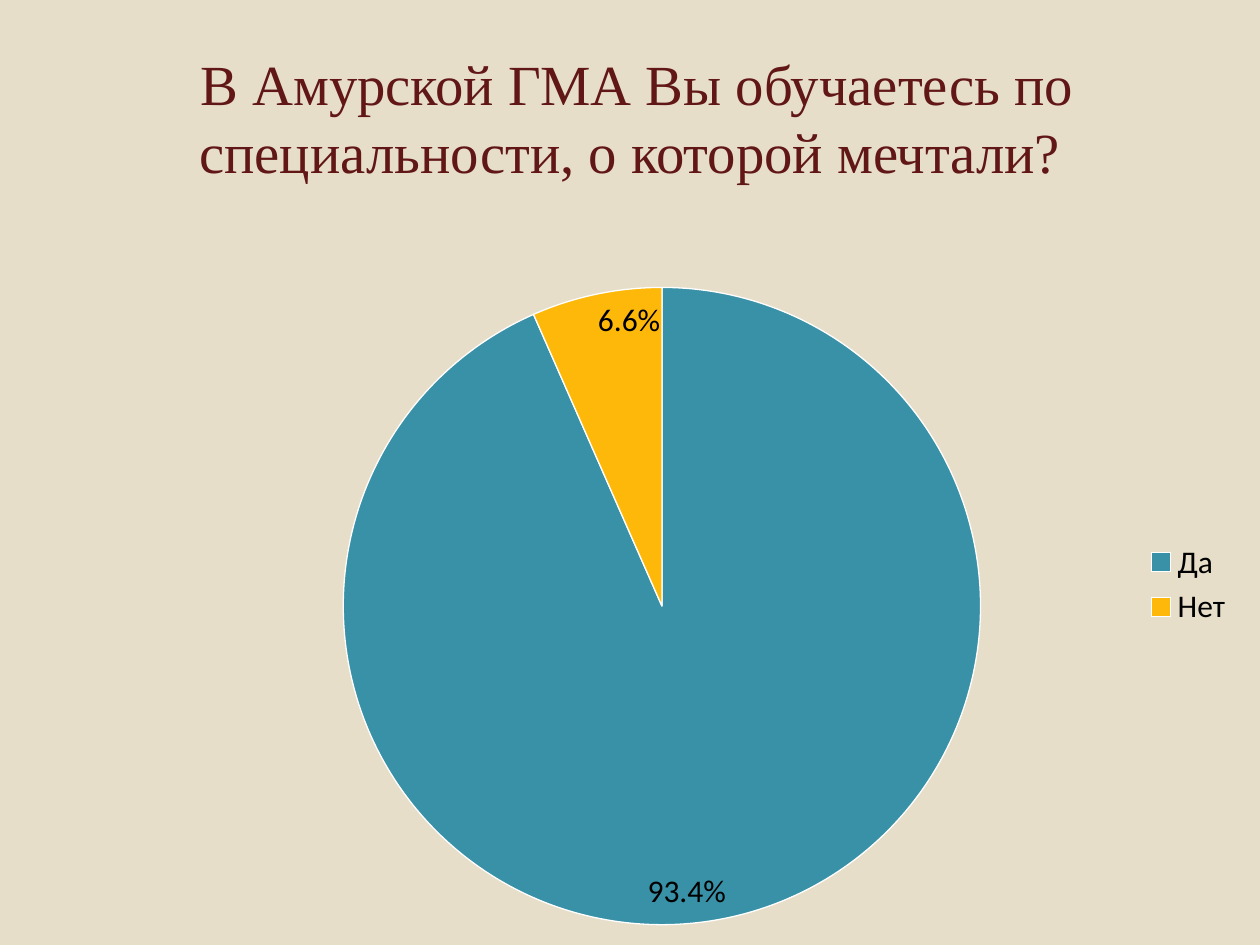
"""Builds a survey slide with a pie chart of two answers."""
from lxml import etree
from pptx import Presentation
from pptx import util as u
from pptx.chart import data
from pptx.dml.color import RGBColor
from pptx.enum import chart as ch, text

COLORS = {"back": "E7DEC9", "title": "621717", "text": "000000",
          "yes": "3891A7", "no": "FEB80A", "edge": "FFFFFF"}
ANSWERS = [("Да", 93.4, "yes"), ("Нет", 6.6, "no")]


def rgb(name):
    return RGBColor.from_string(COLORS[name])


def set_font(font, size, color, face):
    font.size, font.name, font.bold = u.Pt(size), face, False
    font.color.rgb = rgb(color)


def write(tf, content, size=18, color="text", face="Calibri", align=text.PP_ALIGN.LEFT):
    p = tf.paragraphs[0]
    p.alignment = align
    r = p.add_run()
    r.text = content
    set_font(r.font, size, color, face)


class Deck:
    """Holds the presentation, its style and the current slide."""

    def __init__(self, width=10, height=7.5):
        self.prs = Presentation()
        self.prs.slide_width, self.prs.slide_height = u.Inches(width), u.Inches(height)
        self.s = self.prs.slides.add_slide(self.prs.slide_layouts[5])
        fill = self.s.background.fill
        fill.solid()
        fill.fore_color.rgb = rgb("back")

    def box(self, x, y, w, h):
        wide, high = self.prs.slide_width, self.prs.slide_height
        return int(x * wide), int(y * high), int(w * wide), int(h * high)

    def title(self, content, *area):
        sp = self.s.shapes.title
        sp.left, sp.top, sp.width, sp.height = self.box(*area)
        tf = sp.text_frame
        tf.word_wrap = True
        tf.vertical_anchor = text.MSO_ANCHOR.MIDDLE
        write(tf, content, size=32.4, color="title", face="Times New Roman",
              align=text.PP_ALIGN.CENTER)

    def pie(self, answers, plot, *area):
        cd = data.CategoryChartData()
        cd.categories = [name for name, _, _ in answers]
        cd.add_series("Series 1", [value for _, value, _ in answers])
        chart = self.s.shapes.add_chart(ch.XL_CHART_TYPE.PIE, *self.box(*area), cd).chart
        chart.has_title = False
        set_font(chart.font, 18, "text", "Calibri")
        chart.has_legend = True
        chart.legend.position = ch.XL_LEGEND_POSITION.RIGHT
        chart.legend.include_in_layout = False
        set_font(chart.legend.font, 18, "text", "Calibri")
        pie = chart.plots[0]
        pie.vary_by_categories = True
        for i, (_, _, color) in enumerate(answers):
            form = pie.series[0].points[i].format
            form.fill.solid()
            form.fill.fore_color.rgb = rgb(color)
            form.line.color.rgb = rgb("edge")
            form.line.width = u.Pt(0.75)
        self.labels(pie)
        self.place_plot(chart, plot)

    def labels(self, pie):
        pie.has_data_labels = True
        labels = pie.data_labels
        labels.show_percentage, labels.show_value = True, False
        labels.number_format, labels.number_format_is_linked = "0.0%", False
        labels.position = ch.XL_LABEL_POSITION.INSIDE_END
        set_font(labels.font, 18, "text", "Calibri")

    def place_plot(self, chart, plot):
        area = chart.element.find(".//{*}plotArea")
        ns = etree.QName(area).namespace
        for old in area.findall("{*}layout"):
            area.remove(old)
        layout = etree.Element(f"{{{ns}}}layout")
        manual = etree.SubElement(layout, f"{{{ns}}}manualLayout")
        settings = [("layoutTarget", "inner"), ("xMode", "edge"), ("yMode", "edge")]
        for tag, value in settings + list(zip("xywh", plot)):
            etree.SubElement(manual, f"{{{ns}}}{tag}", val=str(value))
        area.insert(0, layout)


def main():
    deck = Deck()
    deck.pie(ANSWERS, (0.15, 0.08, 0.6, 0.9), 0.146, 0.237, 0.843, 0.763)
    deck.title(" В Амурской ГМА Вы обучаетесь по специальности, о которой мечтали?",
               0.05, 0.04, 0.9, 0.167)
    deck.prs.save("out.pptx")


if __name__ == "__main__":
    main()
